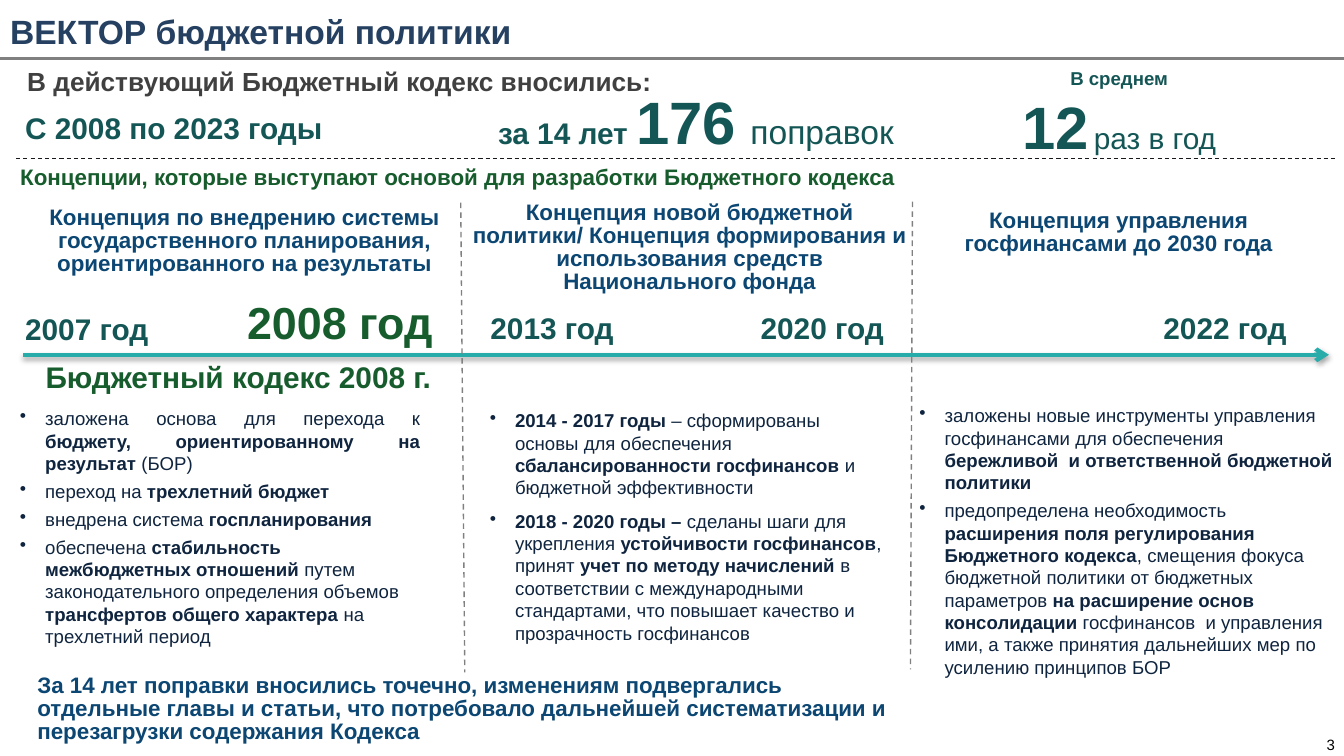
from lxml import etree
from pptx import Presentation, util as u
from pptx.dml.color import RGBColor
from pptx.enum import dml, shapes, text
from pptx.oxml import ns

PX = 9144  # EMU in one px, 100 px to the inch
NAVY = RGBColor(0x25, 0x40, 0x61)
BLUE = RGBColor(0x0C, 0x46, 0x72)
INK = RGBColor(0x0F, 0x24, 0x3E)
PINE = RGBColor(0x14, 0x56, 0x55)
GREEN = RGBColor(0x17, 0x5C, 0x2C)
TEAL = RGBColor(0x27, 0xAC, 0xAA)
GRAPHITE = RGBColor(0x40, 0x40, 0x40)
GREY = RGBColor(0x80, 0x80, 0x80)
DARK = RGBColor(0x17, 0x17, 0x1C)
BLACK = RGBColor(0, 0, 0)

LEFT, CENTER, JUSTIFY = text.PP_ALIGN.LEFT, text.PP_ALIGN.CENTER, text.PP_ALIGN.JUSTIFY
LABEL_INSETS = (0, 5, 0, 0)
BODY_INSETS = (10, 5, 10, 5)
WIDE_INSETS = (13, 7, 13, 7)


class SlideBuilder:
    font = "Arial"

    def __init__(self, deck):
        self.page = deck.slides.add_slide(deck.slide_layouts[6])

    def frame(self, at, insets, grow=True):
        box = self.page.shapes.add_textbox(*(n * PX for n in at))
        frame = box.text_frame
        frame.word_wrap = True
        if grow:
            frame.auto_size = text.MSO_AUTO_SIZE.SHAPE_TO_FIT_TEXT
        frame.margin_left, frame.margin_top, frame.margin_right, frame.margin_bottom = (
            n * PX for n in insets)
        return frame

    def style(self, para, size, color, bold, align=LEFT, spacing=None, after=0):
        para.alignment = align
        para.line_spacing = spacing
        para.space_after = u.Pt(after)
        font = para.font
        font.name, font.size, font.bold = self.font, u.Pt(size), bold
        font.color.rgb = color

    def span(self, para, words, color, size, bold):
        span = para.add_run()
        span.text = words
        font = span.font
        font.name, font.size, font.bold = self.font, u.Pt(size), bold
        font.color.rgb = color

    def label(self, words, at, size, color, align=LEFT, bold=True, spacing=0.85,
              after=8, insets=LABEL_INSETS):
        para = self.frame(at, insets).paragraphs[0]
        para.text = words
        self.style(para, size, color, bold, align, spacing, after)

    def figures(self, lines, at, color, align=LEFT):
        """Each line is a list of (words, size, bold)."""
        frame = self.frame(at, LABEL_INSETS)
        for index, line in enumerate(lines):
            para = frame.add_paragraph() if index else frame.paragraphs[0]
            self.style(para, line[0][1], color, True, align, 0.85, 8)
            for words, size, bold in line:
                self.span(para, words, color, size, bold)

    def bullets(self, items, at, after, first_align=LEFT):
        """Words between asterisks are bold."""
        frame = self.frame(at, BODY_INSETS)
        for index, item in enumerate(items):
            para = frame.add_paragraph() if index else frame.paragraphs[0]
            self.style(para, 13.3, INK, False, LEFT if index else first_align, None, after)
            props = para._p.get_or_add_pPr()
            props.set("marL", str(25 * PX))
            props.set("indent", str(-25 * PX))
            mark = etree.Element(ns.qn("a:buChar"), char="•")
            props.insert_element_before(mark, "a:tabLst", "a:defRPr", "a:extLst")
            for part, words in enumerate(item.split("*")):
                if words:
                    self.span(para, words, INK, 13.3, part % 2 == 1)

    def line(self, start, end, color, width, dashed=False, arrow=False):
        line = self.page.shapes.add_connector(
            shapes.MSO_CONNECTOR.STRAIGHT, *(n * PX for n in start + end))
        line.line.color.rgb = color
        line.line.width = u.Pt(width)
        if dashed:
            line.line.dash_style = dml.MSO_LINE.DASH
        props = line._element.spPr
        effects = etree.SubElement(props, ns.qn("a:effectLst"))
        if arrow:
            etree.SubElement(line.line._get_or_add_ln(), ns.qn("a:tailEnd"), type="arrow")
            shadow = etree.SubElement(effects, ns.qn("a:outerShdw"), blurRad=str(u.Pt(3.1)),
                                      dist=str(u.Pt(1.8)), dir="5400000", rotWithShape="0")
            shade = etree.SubElement(shadow, ns.qn("a:srgbClr"), val="000000")
            etree.SubElement(shade, ns.qn("a:alpha"), val="35000")


def main():
    deck = Presentation()
    deck.slide_width, deck.slide_height = 1333 * PX, 750 * PX
    slide = SlideBuilder(deck)

    # Title and page number
    slide.label("ВЕКТОР бюджетной политики", (10, 11, 1192, 40), 24, NAVY,
                spacing=None, after=2.7, insets=(0, 0, 0, 0))
    slide.line((0, 58), (1333, 58), GREY, 2.25)
    number = slide.frame((1293, 727, 54, 24), WIDE_INSETS, grow=False)
    number.vertical_anchor = text.MSO_ANCHOR.MIDDLE
    number.paragraphs[0].text = "3"
    slide.style(number.paragraphs[0], 10.7, BLACK, False, CENTER)

    # Amendment figures
    slide.label("В действующий Бюджетный кодекс вносились:", (27, 65, 717, 32), 18.7, GRAPHITE)
    slide.label("С 2008 по 2023 годы", (25, 109, 359, 36), 21.3, PINE)
    slide.figures([[("за 14 лет ", 21.3, True), ("176", 42.7, True), (" ", 37.3, True),
                    ("поправок", 24, False)]], (494, 90, 420, 66), PINE)
    slide.figures([[("В среднем", 13.3, True)],
                   [("12", 42.7, True), (" ", 13.3, True), ("раз в год", 21.3, False)]],
                  (926, 65, 368, 97), PINE, CENTER)
    slide.line((16, 157), (1327, 157), DARK, 0.75, dashed=True)

    # Concepts
    slide.label("Концепции, которые выступают основой для разработки Бюджетного кодекса",
                (20, 161, 1109, 28), 16, GREEN)
    for words, at in (
        ("Концепция по внедрению системы государственного планирования, "
         "ориентированного на результаты", (23, 201, 439, 74)),
        ("Концепция новой бюджетной политики/ Концепция формирования и "
         "использования средств Национального фонда", (468, 196, 432, 97)),
        ("Концепция управления госфинансами до 2030 года", (926, 204, 367, 51)),
    ):
        slide.label(words, at, 16, BLUE, CENTER)

    # Timeline
    slide.line((23, 352), (1318, 352), TEAL, 3, arrow=True)
    for year, left, top, width, align in (
        (2007, 25, 309, 154, LEFT),
        (2013, 435, 308, 225, CENTER),
        (2020, 703, 308, 225, CENTER),
        (2022, 1120, 308, 190, CENTER),
    ):
        slide.label(f"{year} год", (left, top, width, 36), 21.3, PINE, align)
    slide.label("2008 год", (245, 296, 225, 51), 32, GREEN)
    slide.label("Бюджетный кодекс 2008 г.", (20, 356, 433, 36), 21.3, GREEN, CENTER, after=0)

    # Column dividers
    slide.line((457, 201), (461, 667), GREY, 1, dashed=True)
    slide.line((905, 200), (903, 664), GREY, 1, dashed=True)

    # Results of each period
    slide.bullets([
        "заложена основа для перехода к *бюджету, ориентированному на результат *(БОР)",
        "переход на *трехлетний бюджет*",
        "внедрена система *госпланирования*",
        "обеспечена *стабильность межбюджетных отношений* путем законодательного "
        "определения объемов *трансфертов общего характера *на трехлетний период",
    ], (10, 399, 417, 251), 4, JUSTIFY)
    slide.bullets([
        "*2014 - 2017 годы* – сформированы основы для обеспечения "
        "*сбалансированности госфинансов *и бюджетной эффективности",
        "*2018 - 2020 годы –* сделаны шаги для укрепления *устойчивости госфинансов*, "
        "принят *учет по методу начислений *в соответствии с международными "
        "стандартами, что повышает качество и прозрачность госфинансов",
    ], (476, 401, 414, 246), 8)
    slide.bullets([
        "заложены новые инструменты управления госфинансами для обеспечения "
        "*бережливой  и ответственной бюджетной политики*",
        "предопределена необходимость *расширения поля регулирования Бюджетного "
        "кодекса*, смещения фокуса бюджетной политики от бюджетных параметров "
        "*на расширение основ консолидации *госфинансов  и управления ими, а также "
        "принятия дальнейших мер по усилению принципов БОР",
    ], (902, 396, 434, 285), 4)

    # Conclusion
    slide.label("За 14 лет поправки вносились точечно, изменениям подвергались отдельные "
                "главы и статьи, что потребовало дальнейшей систематизации и перезагрузки "
                "содержания Кодекса", (24, 663, 875, 82), 16, BLUE, insets=WIDE_INSETS)

    deck.save("out.pptx")


if __name__ == "__main__":
    main()
